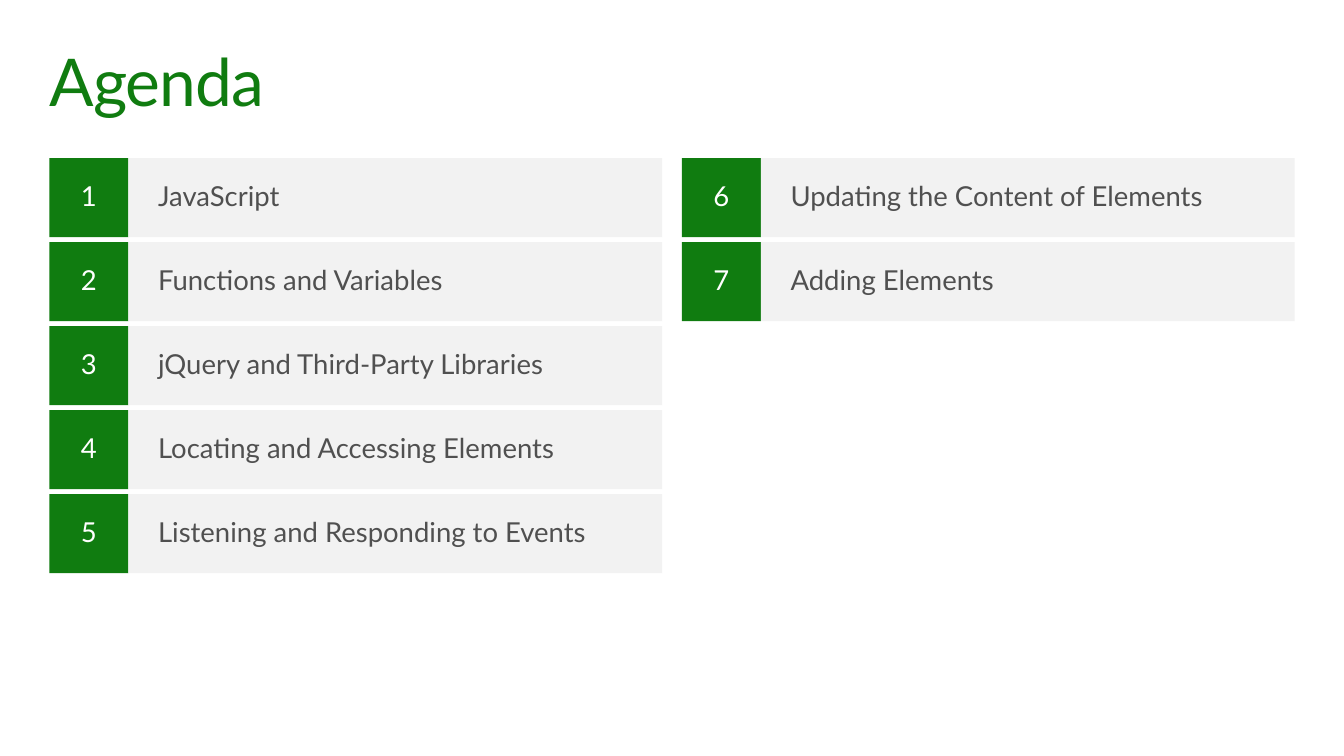
"""Build the agenda slide: a title and two columns of numbered topics."""
from pptx import Presentation
from pptx.dml.color import RGBColor
from pptx.enum.shapes import MSO_SHAPE
from pptx.enum.text import MSO_ANCHOR, PP_ALIGN
from pptx.util import Inches, Pt

GREEN = RGBColor(0x10, 0x7C, 0x10)
LIGHT = RGBColor(0xF2, 0xF2, 0xF2)
GRAY = RGBColor(0x50, 0x50, 0x50)
WHITE = RGBColor(0xFF, 0xFF, 0xFF)

TOPICS = [
    "JavaScript",
    "Functions and Variables",
    "jQuery and Third-Party Libraries",
    "Locating and Accessing Elements",
    "Listening and Responding to Events",
    "Updating the Content of Elements",
    "Adding Elements",
]
ROWS = 5
LEFT, TOP = 0.5, 1.6
COLUMN_STEP, ROW_STEP = 6.4, 0.85
SIDE, BAR_WIDTH = 0.8, 5.4


def write(sp, text, size=20, color=GRAY, align=PP_ALIGN.LEFT,
          anchor=MSO_ANCHOR.MIDDLE, inset=(0.3, 0.1), spacing=None):
    tf = sp.text_frame
    tf.word_wrap = True
    tf.vertical_anchor = anchor
    tf.margin_left = tf.margin_right = Inches(inset[0])
    tf.margin_top = tf.margin_bottom = Inches(inset[1])
    p = tf.paragraphs[0]
    p.alignment = align
    p.line_spacing = 0.9
    p.space_before = Pt(0)
    r = p.add_run()
    r.text = text
    r.font.name = "Lato"
    r.font.size = Pt(size)
    r.font.color.rgb = color
    if spacing is not None:
        r._r.get_or_add_rPr().set("spc", str(spacing))


def add_box(shapes, left, top, width, fill):
    sp = shapes.add_shape(MSO_SHAPE.RECTANGLE, Inches(left), Inches(top),
                          Inches(width), Inches(SIDE))
    sp.shadow.inherit = False
    sp.fill.solid()
    sp.fill.fore_color.rgb = fill
    sp.line.fill.background()
    return sp


prs = Presentation()
prs.slide_width, prs.slide_height = Inches(13.6), Inches(7.65)
s = prs.slides.add_slide(prs.slide_layouts[5])

title = s.shapes.title
title.left, title.top = Inches(0.4), Inches(0.4)
title.width, title.height = Inches(12.8), Inches(1)
write(title, "Agenda", size=48, color=GREEN, anchor=MSO_ANCHOR.TOP,
      inset=(0.1, 0.1), spacing=-70)

for i, topic in enumerate(TOPICS):
    column, row = divmod(i, ROWS)
    left = LEFT + column * COLUMN_STEP
    top = TOP + row * ROW_STEP
    item = s.shapes.add_group_shape()
    number = add_box(item.shapes, left, top, SIDE, GREEN)
    write(number, str(i + 1), color=WHITE, align=PP_ALIGN.CENTER, inset=(0.2, 0.16))
    bar = add_box(item.shapes, left + SIDE, top, BAR_WIDTH, LIGHT)
    write(bar, topic)

prs.save("out.pptx")
